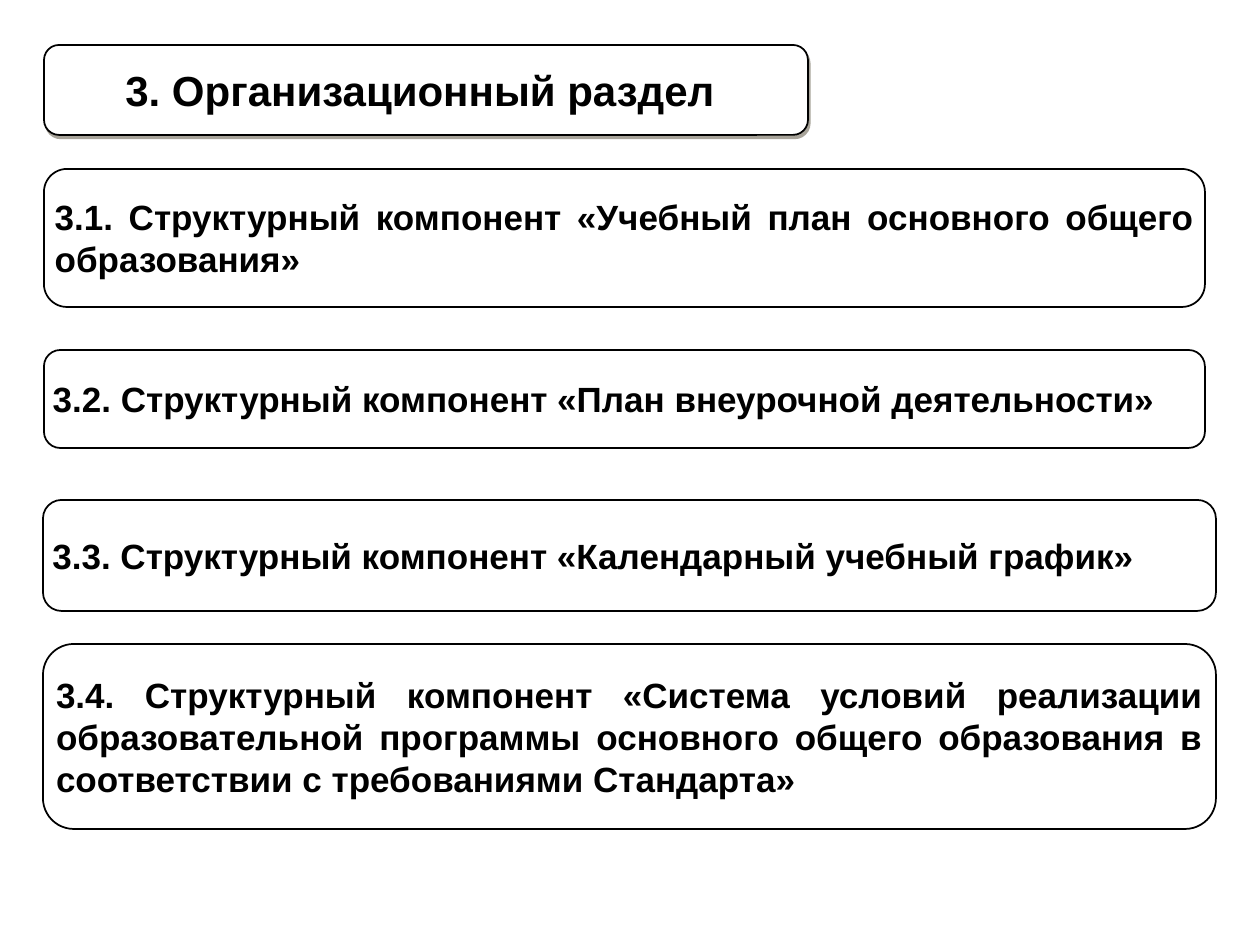
from lxml.etree import SubElement
from pptx import Presentation
from pptx.dml.color import RGBColor
from pptx.enum.shapes import MSO_SHAPE
from pptx.enum.text import MSO_ANCHOR, MSO_AUTO_SIZE, PP_ALIGN
from pptx.oxml.ns import qn
from pptx.util import Pt

# Content: text and box (left, top, width, height) in px
HEADING = "3. Организационный раздел"
HEADING_BOX = (44, 45, 764, 90)
COMPONENTS = [
    ("3.1. Структурный компонент «Учебный план основного общего образования»",
     (44, 169, 1161, 138)),
    ("3.2. Структурный компонент «План внеурочной деятельности»",
     (44, 350, 1161, 98)),
    ("3.3. Структурный компонент «Календарный учебный график»",
     (43, 500, 1173, 111)),
    ("3.4. Структурный компонент «Система условий реализации образовательной "
     "программы основного общего образования в соответствии с требованиями "
     "Стандарта»",
     (43, 644, 1173, 185)),
]

BLACK = RGBColor(0x00, 0x00, 0x00)
WHITE = RGBColor(0xFF, 0xFF, 0xFF)
SHADOW = RGBColor(0x52, 0x4A, 0x37)
INSET = 4
PX = 914400 / 126


def emu(px):
    return round(px * PX)


def add_panel(slide, box):
    panel = slide.shapes.add_shape(MSO_SHAPE.ROUNDED_RECTANGLE, *map(emu, box))
    panel.shadow.inherit = False
    panel.fill.solid()
    panel.fill.fore_color.rgb = WHITE
    panel.line.color.rgb = BLACK
    panel.line.width = Pt(1)
    return panel


def write(frame, text, size, align, left=INSET, right=INSET):
    frame_format = {
        "word_wrap": True, "auto_size": MSO_AUTO_SIZE.NONE,
        "vertical_anchor": MSO_ANCHOR.MIDDLE,
        "margin_left": emu(left), "margin_right": emu(right),
        "margin_top": emu(INSET), "margin_bottom": emu(INSET),
    }
    for name, value in frame_format.items():
        setattr(frame, name, value)
    frame.text = text
    paragraph = frame.paragraphs[0]
    paragraph.alignment = align
    paragraph.line_spacing = 1.0
    font = paragraph.runs[0].font
    for name, value in {"name": "Arial", "size": Pt(size), "bold": True}.items():
        setattr(font, name, value)
    font.color.rgb = BLACK


def cast_shadow(panel):
    effects = panel.element.spPr.find(qn("a:effectLst"))
    shadow = SubElement(effects, qn("a:outerShdw"), blurRad="0",
                        dist=str(Pt(2.2)), dir=str(63 * 60000),
                        algn="ctr", rotWithShape="0")
    color = SubElement(shadow, qn("a:srgbClr"), val=str(SHADOW))
    SubElement(color, qn("a:alpha"), val="50000")


def main():
    deck = Presentation()
    deck.slide_width, deck.slide_height = emu(1260), emu(945)
    slide = deck.slides.add_slide(deck.slide_layouts[5])

    # Heading: shadowed panel with the title in front of it
    heading = slide.shapes.title
    heading_panel = add_panel(slide, HEADING_BOX)
    cast_shadow(heading_panel)
    heading.element.addprevious(heading_panel.element)
    for side, px in zip(("left", "top", "width", "height"), HEADING_BOX):
        setattr(heading, side, emu(px))
    write(heading.text_frame, HEADING, 24, PP_ALIGN.CENTER, left=0, right=12)

    # Structural components of the section
    for text, box in COMPONENTS:
        component = add_panel(slide, box)
        write(component.text_frame, text, 20, PP_ALIGN.JUSTIFY)

    deck.save("out.pptx")


if __name__ == "__main__":
    main()
